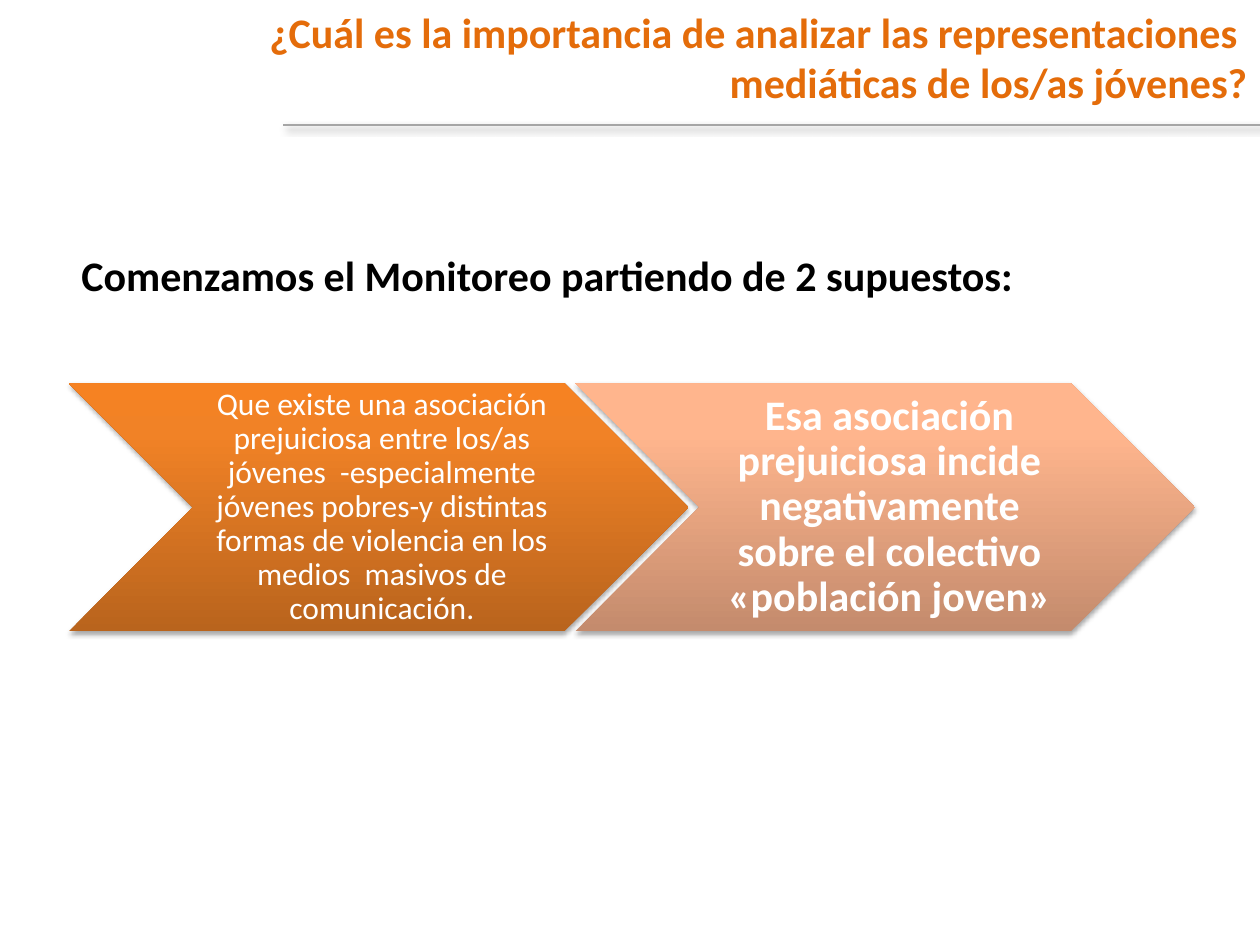
from dataclasses import dataclass

from lxml.etree import SubElement as Sub
from pptx import Presentation
from pptx.dml.color import RGBColor as RGB
from pptx.enum.shapes import MSO_CONNECTOR as Conn, MSO_SHAPE as Shape
from pptx.enum.text import MSO_ANCHOR as Anchor, PP_ALIGN as Align
from pptx.oxml.ns import qn
from pptx.util import Pt


@dataclass(frozen=True)
class Theme:
    font: str = "Calibri"
    title: str = "E46C0A"
    ink: str = "000000"
    light: str = "FFFFFF"
    rule: str = "A6A6A6"
    dark: tuple = ((0, "B9641D"), (80, "F18226"), (100, "F68222"))
    pale: tuple = ((0, "C48B6D"), (80, "FFB58D"), (100, "FFB68F"))
    big: int = 24
    small: int = 18


THEME = Theme()


def apply(item, **values):
    for name, value in values.items():
        setattr(item, name, value)


def style(par, size, color, bold, **format):
    apply(par, **format)
    apply(par.font, name=THEME.font, size=Pt(size), bold=bold)
    par.font.color.rgb = RGB.from_string(color)


def shade(shape, alpha, blur, dist, angle):
    """Give the shape a soft black outer shadow."""
    box = Sub(shape._element.spPr, qn("a:effectLst"))
    drop = Sub(box, qn("a:outerShdw"), blurRad=str(Pt(blur)),
               dist=str(Pt(dist)), dir=str(angle * 60000), rotWithShape="0")
    tone = Sub(drop, qn("a:srgbClr"), val=THEME.ink)
    Sub(tone, qn("a:alpha"), val=str(alpha * 1000))


def blend(shape, stops):
    """Fill the shape with a gradient that runs from bottom to top."""
    shape.fill.gradient()
    shape.fill.gradient_angle = 90
    bar = shape._element.spPr.find(qn("a:gradFill")).find(qn("a:gsLst"))
    for old in list(bar):
        bar.remove(old)
    for pos, color in stops:
        stop = Sub(bar, qn("a:gs"), pos=str(pos * 1000))
        Sub(stop, qn("a:srgbClr"), val=color)


def label(slide, box, lines, color, align, wrap):
    frame = slide.shapes.add_textbox(*map(Pt, box)).text_frame
    frame.word_wrap = wrap
    frame.text = "\n".join(lines)
    for par in frame.paragraphs:
        style(par, THEME.big, color, True, alignment=align)


def rule(slide, left, right, top):
    line = slide.shapes.add_connector(Conn.STRAIGHT, *map(Pt, (right, top, left, top)))
    line.line.width = Pt(0.75)
    line.line.color.rgb = RGB.from_string(THEME.rule)
    shade(line, 40, 4, 3, 45)


def arrow(slide, left, stops, text, size, bold, pad):
    """Add a chevron; pad is the wide left inset and the other three."""
    shape = slide.shapes.add_shape(Shape.CHEVRON, *map(Pt, (left, 219, 354, 141.7)))
    blend(shape, stops)
    shape.line.fill.background()
    shade(shape, 35, 3.1, 1.8, 90)
    frame = shape.text_frame
    wide, slim = map(Pt, pad)
    apply(frame, text=text, word_wrap=True, vertical_anchor=Anchor.MIDDLE,
          margin_left=wide, margin_right=slim, margin_top=slim, margin_bottom=slim)
    style(frame.paragraphs[0], size, THEME.light, bold,
          alignment=Align.CENTER, line_spacing=0.9)


def main():
    deck = Presentation()
    apply(deck, slide_width=Pt(720), slide_height=Pt(540))
    slide = deck.slides.add_slide(deck.slide_layouts[6])

    rule(slide, 161.5, 720, 71.4)
    label(slide, (141, 0, 579, 65.4),
          ["¿Cuál es la importancia de analizar las representaciones ",
           "mediáticas de los/as jóvenes?"],
          THEME.title, Align.RIGHT, False)
    label(slide, (39.4, 139, 657, 36.4),
          ["Comenzamos el Monitoreo partiendo de 2 supuestos:"],
          THEME.ink, Align.LEFT, True)

    left, step = 39.4, 289.4
    arrow(slide, left, THEME.dark,
          "Que existe una asociación prejuiciosa entre los/as jóvenes  "
          "-especialmente jóvenes pobres-y distintas formas de violencia "
          "en los medios  masivos de comunicación.",
          THEME.small, False, (5.7, 1.9))
    arrow(slide, left + step, THEME.pale,
          "Esa asociación prejuiciosa incide negativamente sobre el "
          "colectivo «población joven»",
          THEME.big, True, (7.6, 2.5))

    deck.save("out.pptx")


if __name__ == "__main__":
    main()
